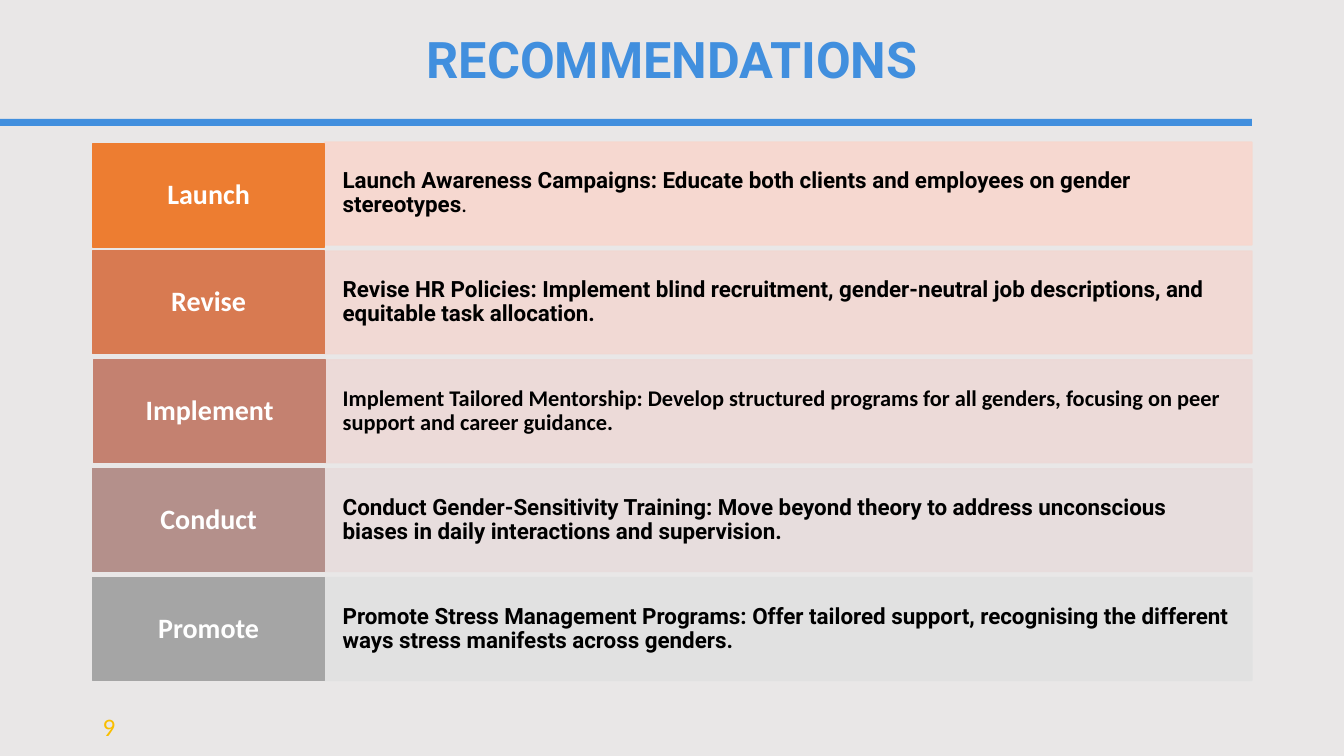
from dataclasses import dataclass

from lxml import etree
from pptx import Presentation
from pptx import util as u
from pptx.dml.color import RGBColor
from pptx.enum import shapes, text
from pptx.oxml import ns


@dataclass(frozen=True)
class Theme:
    background: str = "E9E7E7"
    accent: str = "418FDE"
    number: str = "F9BE00"
    dark: str = "000000"
    light: str = "FFFFFF"
    heading_font: str = "Roboto"
    label_font: str = "Calibri"
    title_size: int = 36
    label_size: int = 20
    number_size: int = 18
    body_size: int = 16
    panel_opacity: int = 90


THEME = Theme()
LEFT, CENTER = text.PP_ALIGN.LEFT, text.PP_ALIGN.CENTER

# Label, label colour, label offset (x, y), panel colour, text runs (wording, font, bold)
ROWS = [
    ("Launch", "ED7D31", (0, 1.44), "F8D7CE",
     [("Launch Awareness Campaigns: Educate both clients and employees on gender "
       "stereotypes", THEME.heading_font, True),
      (".", THEME.label_font, False)]),
    ("Revise", "D87A51", (0, 0), "F2D8D2",
     [("Revise HR Policies: Implement blind recruitment, gender-neutral job "
       "descriptions, and equitable task allocation.", THEME.heading_font, True)]),
    ("Implement", "C48170", (0.72, 0), "EDD9D7",
     [("Implement Tailored Mentorship: Develop structured programs for all genders, "
       "focusing on peer support and career guidance.", THEME.label_font, True)]),
    ("Conduct", "B4908B", (0, 0), "E7DCDC",
     [("Conduct Gender-Sensitivity Training: Move beyond theory to address unconscious "
       "biases in daily interactions and supervision.", THEME.heading_font, True)]),
    ("Promote", "A5A5A5", (0, 0), "E1E1E1",
     [("Promote Stress Management Programs: Offer tailored support, recognising the "
       "different ways stress manifests across genders.", THEME.heading_font, True)]),
]


def apply(target, values):
    for name, value in values.items():
        setattr(target, name, value)


def write(shape, runs, size, color, align, insets=(7.2, 3.6), spacing=0.9):
    """Fill a shape with one paragraph of runs given as (wording, font, bold)."""
    across, down = (u.Pt(inset) for inset in insets)
    apply(shape.text_frame, {
        "word_wrap": True, "vertical_anchor": text.MSO_ANCHOR.MIDDLE,
        "margin_left": across, "margin_right": across,
        "margin_top": down, "margin_bottom": down})
    paragraph = shape.text_frame.paragraphs[0]
    apply(paragraph, {"alignment": align, "line_spacing": spacing})
    for wording, font, bold in runs:
        run = paragraph.add_run()
        run.text = wording
        apply(run.font, {"name": font, "size": u.Pt(size), "bold": bold})
        run.font.color.rgb = RGBColor.from_string(color)


def add_text_box(slide, box, *content, **options):
    shape = slide.shapes.add_textbox(*map(u.Pt, box))
    write(shape, *content, **options)


def add_block(slide, box, color, outlined=True, opacity=100):
    shape = slide.shapes.add_shape(shapes.MSO_SHAPE.RECTANGLE, *map(u.Pt, box))
    shape.shadow.inherit = False
    shape.fill.solid()
    shape.fill.fore_color.rgb = RGBColor.from_string(color)
    if outlined:
        shape.line.width = u.Pt(1)
        shape.line.color.rgb = RGBColor.from_string(color)
    else:
        shape.line.fill.background()
    if opacity < 100:
        for paint in shape._element.spPr.iter(ns.qn("a:srgbClr")):
            etree.SubElement(paint, ns.qn("a:alpha"), val=str(opacity * 1000))
    return shape


def add_header(slide, box):
    """Centred title with a rule below that starts at the slide edge."""
    left, top, width, height = box
    add_block(slide, (0, top + 69.84, left + width, 5), THEME.accent, outlined=False)
    add_text_box(slide, (left, top, width, height),
                 [("RECOMMENDATIONS", THEME.heading_font, True)],
                 THEME.title_size, THEME.accent, CENTER)


def add_recommendations(slide, box):
    """Equal rows, each with a coloured label and a pale text panel."""
    left, top, width, height = box
    gap, label_width = 4.32, width * 0.2
    row_height = (height - gap * (len(ROWS) - 1)) / len(ROWS)
    for index, (label, label_color, (dx, dy), panel_color, runs) in enumerate(ROWS):
        y = top + index * (row_height + gap)
        panel = add_block(slide, (left + label_width, y, width - label_width, row_height),
                          panel_color, opacity=THEME.panel_opacity)
        write(panel, runs, THEME.body_size, THEME.dark, LEFT, insets=(12.96, 18.72))
        tag = add_block(slide, (left + dx, y + dy, label_width, row_height), label_color)
        write(tag, [(label, THEME.label_font, True)], THEME.label_size, THEME.light,
              CENTER, insets=(8.64, 7.2))


def add_page_number(slide, box):
    add_text_box(slide, box, [("9", THEME.label_font, False)],
                 THEME.number_size, THEME.number, LEFT, spacing=1.0)


def main():
    presentation = Presentation()
    apply(presentation, {"slide_width": u.Pt(960), "slide_height": u.Pt(540)})
    slide = presentation.slides.add_slide(presentation.slide_layouts[6])
    slide.background.fill.solid()
    slide.background.fill.fore_color.rgb = RGBColor.from_string(THEME.background)

    left, width = 66.24, 828
    add_header(slide, (left, 15.12, width, 58.32))
    add_recommendations(slide, (left, 101.52, width, 384.48))
    add_page_number(slide, (left, 504.72, 83.52, 28.8))
    presentation.save("out.pptx")


if __name__ == "__main__":
    main()
